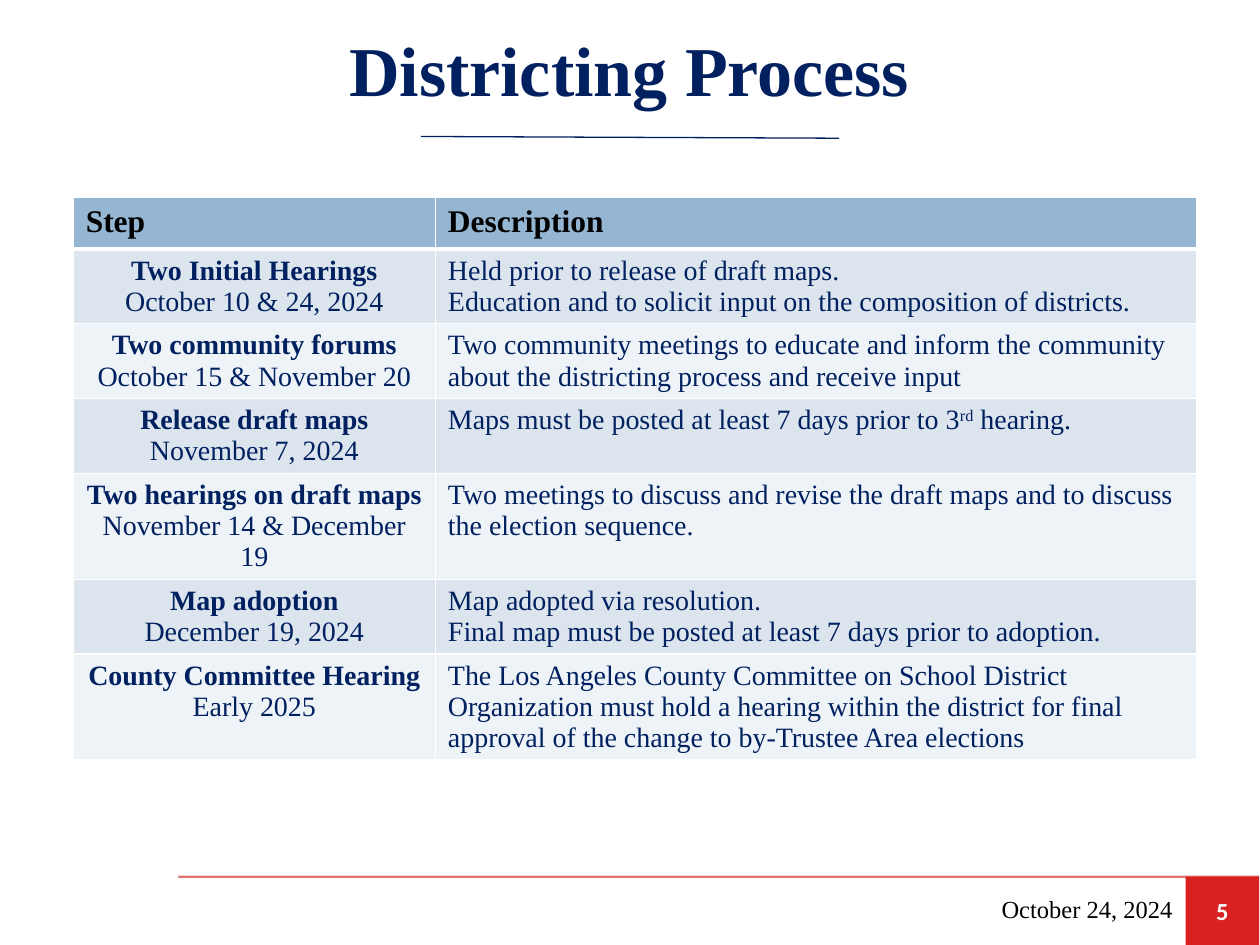
from lxml import etree
from pptx import Presentation
from pptx.dml.color import RGBColor
from pptx.enum.shapes import MSO_CONNECTOR, MSO_SHAPE
from pptx.enum.text import MSO_ANCHOR, MSO_AUTO_SIZE, PP_ALIGN
from pptx.oxml.ns import qn
from pptx.util import Pt

LEFT, CENTER, RIGHT = PP_ALIGN.LEFT, PP_ALIGN.CENTER, PP_ALIGN.RIGHT
MIDDLE = MSO_ANCHOR.MIDDLE
SERIF = "Times New Roman"

COLORS = {
    "navy": "002060", "black": "000000", "white": "FFFFFF",
    "header": "94B6D2", "odd": "DCE5EE", "even": "EEF3F7",
    "red": "D92121", "rule": "C80000",
}

TITLE = "Districting Process"
DATE = "October 24, 2024"
PAGE = "5"
HEADINGS = ("Step", "Description")
# Step name, its dates, and the paragraphs of its description.
# A tuple holds runs, the second of which is raised.
STEPS = [
    ("Two Initial Hearings", "October 10 & 24, 2024",
     ["Held prior to release of draft maps.",
      "Education and to solicit input on the composition of districts."]),
    ("Two community forums", "October 15 & November 20",
     ["Two community meetings to educate and inform the community about "
      "the districting process and receive input"]),
    ("Release draft maps", "November 7, 2024",
     [("Maps must be posted at least 7 days prior to 3", "rd", " hearing.")]),
    ("Two hearings on draft maps", "November 14 & December 19",
     ["Two meetings to discuss and revise the draft maps and to discuss "
      "the election sequence."]),
    ("Map adoption", "December 19, 2024",
     ["Map adopted via resolution.",
      "Final map must be posted at least 7 days prior to adoption."]),
    ("County Committee Hearing", "Early 2025",
     ["The Los Angeles County Committee on School District Organization "
      "must hold a hearing within the district for final approval of the "
      "change to by-Trustee Area elections"]),
]

FORMATS = {
    "title": {"size": Pt(40), "name": SERIF, "bold": True, "color": "navy"},
    "heading": {"size": Pt(18), "name": SERIF, "bold": True, "color": "black"},
    "step": {"size": Pt(16), "name": SERIF, "bold": True, "color": "navy"},
    "detail": {"size": Pt(16), "name": SERIF, "bold": False, "color": "navy"},
    "date": {"size": Pt(14), "name": SERIF, "bold": False, "color": "black"},
    "page": {"size": Pt(14), "name": "Calibri", "bold": True, "color": "white"},
}

TABLE_LEFT, TABLE_TOP, ROW_HEIGHT = 41.8, 113, 29.2
COLUMN_WIDTHS = (207, 435)
FOOTER_TOP = 501


def rgb(color):
    return RGBColor.from_string(COLORS[color])


def box(left, top, width, height):
    return Pt(left), Pt(top), Pt(width), Pt(height)


def write(frame, paragraphs, align):
    """Fill a text frame from (content, format name) pairs."""
    for index, (content, style) in enumerate(paragraphs):
        paragraph = frame.add_paragraph() if index else frame.paragraphs[0]
        paragraph.alignment = align
        parts = content if isinstance(content, tuple) else (content,)
        for position, part in enumerate(parts):
            run = paragraph.add_run()
            run.text = part
            for attribute, value in FORMATS[style].items():
                if attribute == "color":
                    run.font.color.rgb = rgb(value)
                else:
                    setattr(run.font, attribute, value)
            if position == 1:
                run._r.get_or_add_rPr().set("baseline", "30000")


def add_rule(slide, start, end, color, width, opacity=None):
    rule = slide.shapes.add_connector(
        MSO_CONNECTOR.STRAIGHT, *map(Pt, start), *map(Pt, end))
    rule.line.color.rgb = rgb(color)
    rule.line.width = Pt(width)
    properties = rule._element.spPr
    etree.SubElement(properties, qn("a:effectLst"))
    if opacity:
        tint = properties.find(".//" + qn("a:srgbClr"))
        etree.SubElement(tint, qn("a:alpha"), val=str(opacity * 1000))


def format_cell(cell, fill, top, bottom):
    """Give a cell its fill and white borders, 1 pt wide at the sides."""
    properties = cell._tc.get_or_add_tcPr()
    for side, width in (("L", 1), ("R", 1), ("T", top), ("B", bottom)):
        border = etree.SubElement(properties, qn("a:ln" + side), w=str(Pt(width)))
        paint = etree.SubElement(border, qn("a:solidFill"))
        etree.SubElement(paint, qn("a:srgbClr"), val=COLORS["white"])
    cell.fill.solid()
    cell.fill.fore_color.rgb = rgb(fill)


def add_steps_table(slide):
    rows = len(STEPS) + 1
    table = slide.shapes.add_table(
        rows, len(HEADINGS),
        *box(TABLE_LEFT, TABLE_TOP, sum(COLUMN_WIDTHS), rows * ROW_HEIGHT)).table
    for column, width in zip(table.columns, COLUMN_WIDTHS):
        column.width = Pt(width)
    for row in table.rows:
        row.height = Pt(ROW_HEIGHT)
    for column, heading in enumerate(HEADINGS):
        cell = table.cell(0, column)
        format_cell(cell, "header", 1, 3)
        write(cell.text_frame, [(heading, "heading")], LEFT)
    for row, (step, dates, description) in enumerate(STEPS, 1):
        contents = (
            ([(step, "step"), (dates, "detail")], CENTER),
            ([(line, "detail") for line in description], LEFT),
        )
        for column, (paragraphs, align) in enumerate(contents):
            cell = table.cell(row, column)
            format_cell(cell, "odd" if row % 2 else "even", 3 if row == 1 else 1, 1)
            write(cell.text_frame, paragraphs, align)


def add_footer(slide):
    add_rule(slide, (102, FOOTER_TOP), (719.5, FOOTER_TOP), "rule", 1.25, 55)
    badge = slide.shapes.add_shape(
        MSO_SHAPE.RECTANGLE, *box(677.5, FOOTER_TOP, 42, 39))
    badge.shadow.inherit = False
    badge.fill.solid()
    badge.fill.fore_color.rgb = rgb("red")
    badge.line.fill.background()
    badge.text_frame.vertical_anchor = MIDDLE
    write(badge.text_frame, [(PAGE, "page")], CENTER)

    date = slide.shapes.add_textbox(*box(467.3, 504.7, 210, 29)).text_frame
    date.word_wrap = True
    date.vertical_anchor = MIDDLE
    write(date, [(DATE, "date")], RIGHT)


def main():
    deck = Presentation()
    deck.slide_width, deck.slide_height = Pt(720), Pt(540)
    slide = deck.slides.add_slide(deck.slide_layouts[5])

    title = slide.shapes.title
    title.left, title.top, title.width, title.height = box(26.6, 0, 666, 78)
    title.text_frame.auto_size = MSO_AUTO_SIZE.NONE
    title.text_frame.vertical_anchor = MIDDLE
    write(title.text_frame, [(TITLE, "title")], CENTER)
    add_rule(slide, (240.5, 78), (479.5, 79), "navy", 0.75)

    add_steps_table(slide)
    add_footer(slide)
    deck.save("out.pptx")


if __name__ == "__main__":
    main()
